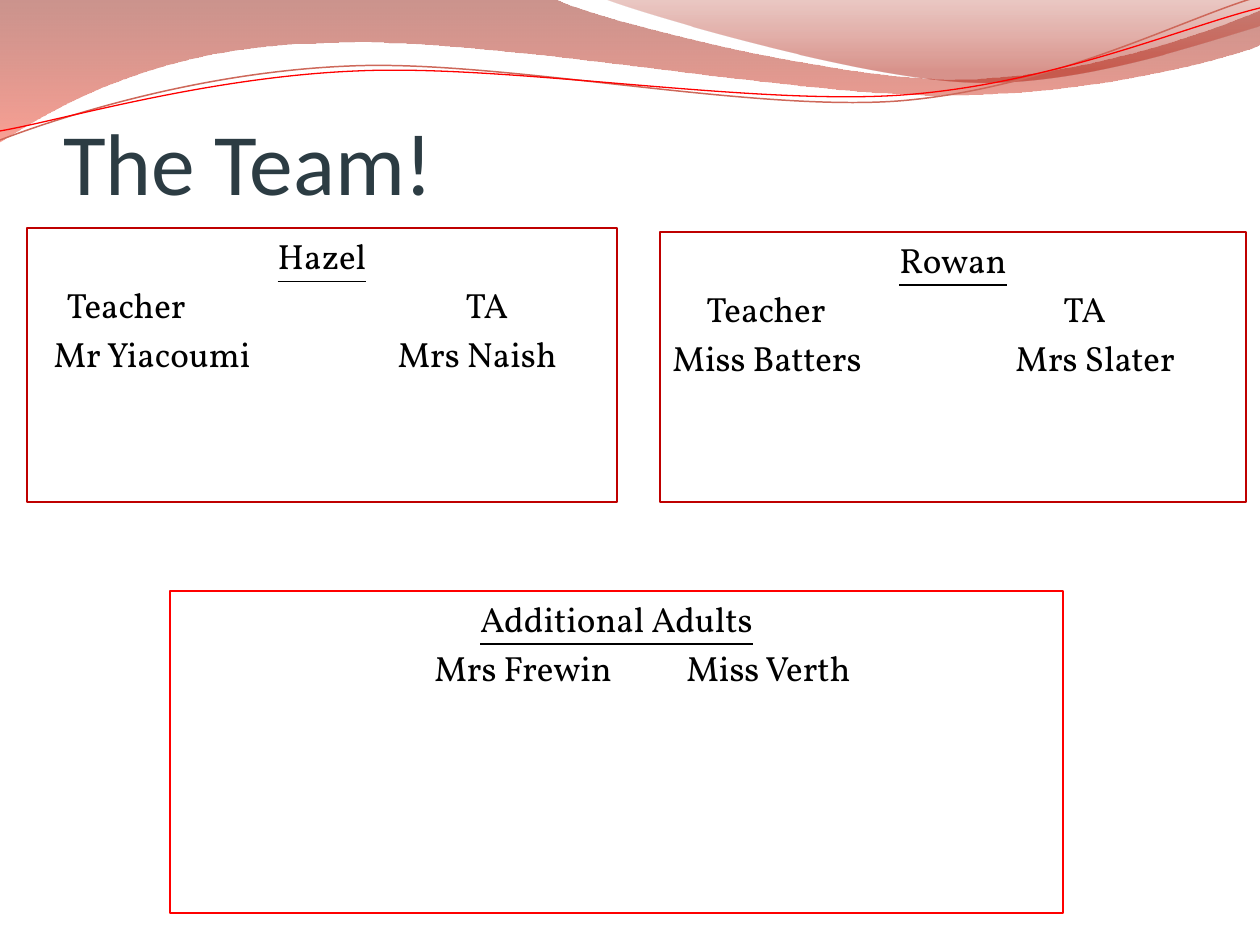
from lxml.etree import SubElement
from pptx import Presentation
from pptx.dml.color import RGBColor
from pptx.enum.shapes import MSO_SHAPE
from pptx.enum.text import MSO_ANCHOR, MSO_AUTO_SIZE, PP_ALIGN
from pptx.oxml.ns import qn
from pptx.util import Emu, Pt

SCALE = 914400 / 126
SLATE = RGBColor(0x2C, 0x3C, 0x43)
BLACK = RGBColor(0, 0, 0)
CRIMSON = RGBColor(0xBF, 0, 0)
RED = RGBColor(0xFF, 0, 0)
CORAL = RGBColor(0xCE, 0x68, 0x5A)
MAROON = RGBColor(0x8C, 0x11, 0x03)
SALMON = RGBColor(0xF5, 0x52, 0x3C)
BRICK = RGBColor(0xBC, 0x4C, 0x3D)
RUST = RGBColor(0xAB, 0x11, 0)

# Each wave is a start point, then segments of one point (line) or three (curve).
BROAD = [(0, 0), [(554, -1)], [(600, 21), (837, 79), (955, 79)],
         [(1075, 79), (1207, 33), (1260, 11)], [(1261, 45)],
         [(1239, 55), (1096, 96), (940, 95)], [(784, 95), (481, 35), (324, 43)],
         [(163, 45), (58, 105), (-1, 142)]]
CREST = [(604, -1), [(641, 14), (859, 78), (969, 82)],
         [(1079, 87), (1211, 40), (1260, 26)], [(1260, 0)]]
UPPER = [(0, 140), [(60, 117), (199, 72), (349, 66)],
         [(498, 59), (747, 112), (898, 101)], [(1050, 89), (1182, 19), (1257, -3)]]
LOWER = [(0, 131), [(59, 121), (207, 77), (357, 71)],
         [(508, 64), (752, 106), (903, 95)], [(1053, 84), (1186, 26), (1260, 8)]]


def px(num):
    return Emu(round(num * SCALE))


def add_wave(slide, wave, close):
    """Build the outline, then turn each group of three points into a curve."""
    start, *parts = wave
    form = slide.shapes.build_freeform(*start, scale=SCALE)
    form.add_line_segments([dot for part in parts for dot in part], close=close)
    shape = form.convert_to_shape()
    shape.shadow.inherit = False
    lines = iter(list(shape._element.spPr.iter(qn("a:lnTo"))))
    for part in parts:
        nodes = [next(lines) for _ in part]
        if len(nodes) == 3:
            curve = nodes[0].makeelement(qn("a:cubicBezTo"))
            nodes[0].addprevious(curve)
            for node in nodes:
                curve.append(node[0])
                node.getparent().remove(node)
    return shape


def add_band(slide, wave, *stops):
    """Add a filled wave; each stop is position, colour, opacity percent."""
    band = add_wave(slide, wave, True)
    band.line.fill.background()
    band.fill.gradient()
    band.fill.gradient_angle = 270
    for stop, (place, tint, _) in zip(band.fill.gradient_stops, stops):
        stop.position = place
        stop.color.rgb = tint
    tints = band._element.spPr.iter(qn("a:srgbClr"))
    for node, (_, _, alpha) in zip(tints, stops):
        SubElement(node, qn("a:alpha")).set("val", str(alpha * 1000))


def add_curve(slide, wave, tint, width):
    curve = add_wave(slide, wave, False)
    curve.fill.background()
    curve.line.color.rgb = tint
    curve.line.width = Pt(width)


def place(shape, left, top, width, height):
    shape.left, shape.top = px(left), px(top)
    shape.width, shape.height = px(width), px(height)


def set_title(title):
    place(title, 63, 55, 1134, 158)
    frame = title.text_frame
    frame.text = "The Team!"
    frame.auto_size = MSO_AUTO_SIZE.NONE
    frame.vertical_anchor = MSO_ANCHOR.BOTTOM
    frame.margin_left = frame.margin_right = frame.margin_bottom = 0
    frame.margin_top = px(6)
    para = frame.paragraphs[0]
    para.alignment = PP_ALIGN.LEFT
    font = para.runs[0].font
    font.name, font.size, font.color.rgb = "Calibri", Pt(50), SLATE


def set_para(para, text, indent=0, tab=0):
    """Set a centred heading or, when a tab step is given, a row."""
    para.text = text
    para.alignment = PP_ALIGN.LEFT if tab else PP_ALIGN.CENTER
    para.space_before = Pt(4 if tab else 0)
    props = para._p.get_or_add_pPr()
    props.set("marL", "0")
    props.set("indent", str(px(indent)))
    if tab:
        props.set("defTabSz", str(px(tab)))
    SubElement(props, qn("a:buNone"))
    for run in para.runs:
        font = run.font
        font.name, font.size, font.color.rgb = "Vollkorn", Pt(20), BLACK
        font.underline = not tab


def fill_panel(panel, edge, head, *rows):
    """Format a panel with a heading and rows of text, indent and tab step."""
    panel.fill.background()
    panel.line.color.rgb = edge
    panel.line.width = Pt(0.75)
    frame = panel.text_frame
    frame.word_wrap = True
    frame.auto_size = MSO_AUTO_SIZE.NONE
    frame.vertical_anchor = MSO_ANCHOR.TOP
    set_para(frame.paragraphs[0], head)
    for row in rows:
        set_para(frame.add_paragraph(), *row)


def add_panel(slide, box, edge, head, *rows):
    panel = slide.shapes.add_shape(MSO_SHAPE.RECTANGLE, *map(px, box))
    panel.shadow.inherit = False
    fill_panel(panel, edge, head, *rows)


def main():
    deck = Presentation()
    deck.slide_width, deck.slide_height = px(1260), px(945)
    slide = deck.slides.add_slide(deck.slide_layouts[1])
    title, body = slide.placeholders

    add_band(slide, BROAD, (0, MAROON, 45), (1, SALMON, 55))
    add_band(slide, CREST, (0, BRICK, 30), (0.8, RUST, 45))
    add_curve(slide, UPPER, CORAL, 0.85)
    add_curve(slide, LOWER, RED, 0.75)
    for holder in (title, body):
        slide.shapes._spTree.append(holder._element)

    set_title(title)
    place(body, 27, 228, 590, 274)
    fill_panel(body, CRIMSON, "Hazel",
               ("Teacher\tTA", 27, 426),
               ("Mr Yiacoumi\tMrs Naish", 14, 358))
    add_panel(slide, (170, 591, 893, 322), RED, "Additional Adults",
              ("Mrs Frewin\tMiss Verth", 252, 504))
    add_panel(slide, (660, 232, 586, 270), CRIMSON, "Rowan",
              ("Teacher\tTA", 34, 391),
              ("Miss Batters\tMrs Slater", 0, 343))
    deck.save("out.pptx")


if __name__ == "__main__":
    main()
